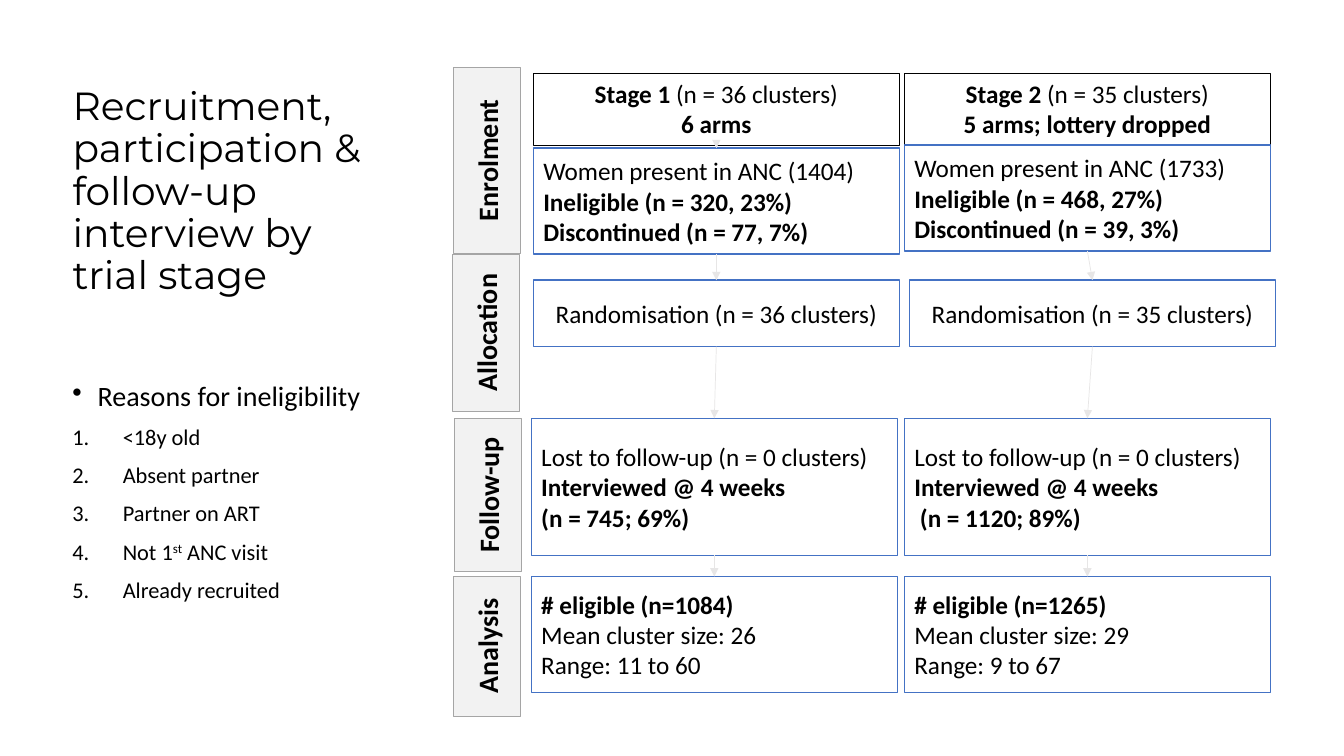
from lxml.etree import SubElement
from pptx import Presentation
from pptx.dml.color import RGBColor
from pptx.enum.shapes import MSO_CONNECTOR as Connector, MSO_SHAPE as Shape
from pptx.enum.text import MSO_ANCHOR as Anchor, PP_ALIGN as Align
from pptx.oxml.ns import qn
from pptx.util import Inches, Pt

# Content: a paragraph is a list of (text, style) runs; b = bold, s = superscript
TITLE = "Recruitment, participation & follow-up interview by trial stage"
REASONS_HEADING = "Reasons for ineligibility"
REASONS = [
    [("<18y old", "")],
    [("Absent partner", "")],
    [("Partner on ART", "")],
    [("Not 1", ""), ("st", "s"), (" ANC visit", "")],
    [("Already recruited", "")],
]
# Phase label, centre x, centre y, length
PHASES = [
    ("Enrolment", 4.83, 1.59, 1.85),
    ("Allocation", 4.82, 3.3, 1.56),
    ("Follow-up", 4.84, 4.91, 1.52),
    ("Analysis", 4.83, 6.41, 1.39),
]
# Box rows of a stage: top, height, alignment
ROWS = [
    (0.73, 0.71, Align.CENTER),
    (1.47, 1.05, Align.LEFT),
    (2.78, 0.66, Align.CENTER),
    (4.15, 1.36, Align.LEFT),
    (5.72, 1.15, Align.LEFT),
]
STAGES = [
    {
        "lefts": [5.29, 5.29, 5.29, 5.27, 5.27],
        "women_top": 1.47,
        "boxes": [
            [[("Stage 1 ", "b"), ("(n = 36 clusters)", "")], [("6 arms", "b")]],
            [[("Women present in ANC (1404)", "")],
             [("Ineligible (n = 320, 23%)", "b")],
             [("Discontinued (n = 77, 7%)", "b")]],
            [[("Randomisation (n = 36 clusters)", "")]],
            [[("Lost to follow-up (n = 0 clusters)", "")],
             [("Interviewed @ 4 weeks", "b")],
             [("(n = 745; 69%)", "b")]],
            [[("# eligible (n=1084)", "b")],
             [("Mean cluster size: 26", "")],
             [("Range: 11 to 60", "")]],
        ],
    },
    {
        "lefts": [8.97, 8.97, 9.02, 8.97, 8.97],
        "women_top": 1.44,
        "boxes": [
            [[("Stage 2 ", "b"), ("(n = 35 clusters)", "")],
             [("5 arms; lottery dropped", "b")]],
            [[("Women present in ANC (1733)", "")],
             [("Ineligible (n = 468, 27%)", "b")],
             [("Discontinued (n = 39, 3%)", "b")]],
            [[("Randomisation (n = 35 clusters)", "")]],
            [[("Lost to follow-up (n = 0 clusters)", "")],
             [("Interviewed @ 4 weeks", "b")],
             [(" (n = 1120; 89%)", "b")]],
            [[("# eligible (n=1265)", "b")],
             [("Mean cluster size: 29", "")],
             [("Range: 9 to 67", "")]],
        ],
    },
]
BOX_WIDTH, LABEL_WIDTH = 3.63, 0.66
COLORS = {
    "text": "000000", "box": "FFFFFF", "box_line": "4472C4",
    "label": "F2F2F2", "label_line": "A5A5A5", "arrow": "E7E6E6",
}


def color(name):
    return RGBColor.from_string(COLORS[name])


def write(paragraph, runs, size=18, font="Calibri", align=Align.LEFT, spacing=1.0, before=0):
    paragraph.alignment = align
    paragraph.line_spacing = spacing
    paragraph.space_before = Pt(before)
    for text, style in runs:
        run = paragraph.add_run()
        run.text = text
        run.font.name = font
        run.font.size = Pt(size)
        run.font.bold = style == "b"
        run.font.color.rgb = color("text")
        if style == "s":
            run.font._element.set("baseline", "30000")


def set_bullet(paragraph, tag, indent, **attributes):
    properties = paragraph._p.get_or_add_pPr()
    properties.set("marL", str(Inches(indent)))
    properties.set("indent", str(-Inches(indent)))
    SubElement(properties, qn(tag), **attributes)


def add_box(slide, left, top, width, height, paragraphs, fill, line, line_width,
            anchor=Anchor.MIDDLE, **text_format):
    shape = slide.shapes.add_shape(
        Shape.RECTANGLE, Inches(left), Inches(top), Inches(width), Inches(height))
    shape.shadow.inherit = False
    if fill:
        shape.fill.solid()
        shape.fill.fore_color.rgb = color(fill)
    else:
        shape.fill.background()
    shape.line.color.rgb = color(line)
    shape.line.width = Pt(line_width)
    frame = shape.text_frame
    frame.word_wrap = True
    frame.vertical_anchor = anchor
    for index, runs in enumerate(paragraphs):
        paragraph = frame.add_paragraph() if index else frame.paragraphs[0]
        write(paragraph, runs, **text_format)
    return shape


def add_arrow(slide, upper, lower):
    arrow = slide.shapes.add_connector(Connector.STRAIGHT, 0, 0, 0, 0)
    arrow.begin_connect(upper, 2)
    arrow.end_connect(lower, 0)
    arrow.line.color.rgb = color("arrow")
    arrow.line.width = Pt(0.5)
    SubElement(arrow.line._get_or_add_ln(), qn("a:tailEnd"), type="triangle")
    SubElement(arrow._element.spPr, qn("a:effectLst"))


def main():
    presentation = Presentation()
    presentation.slide_width = Inches(13.33)
    presentation.slide_height = Inches(7.5)
    slide = presentation.slides.add_slide(presentation.slide_layouts[5])

    # Title
    title = slide.shapes.title
    title.left, title.top = Inches(0.62), Inches(0.39)
    title.width, title.height = Inches(3.27), Inches(3.04)
    title.text_frame.word_wrap = True
    title.text_frame.vertical_anchor = Anchor.MIDDLE
    write(title.text_frame.paragraphs[0], [(TITLE, "")], size=28, font="Montserrat", spacing=0.9)

    # Phase labels, turned to read upwards
    for name, center_x, center_y, length in PHASES:
        label = add_box(slide, center_x - length / 2, center_y - LABEL_WIDTH / 2,
                        length, LABEL_WIDTH, [[(name, "b")]], "label", "label_line", 0.5,
                        size=20, align=Align.CENTER)
        label.rotation = 270

    # Stage columns, each box joined to the next
    for stage in STAGES:
        boxes = []
        for row, (top, height, align) in enumerate(ROWS):
            header = row == 0
            boxes.append(add_box(
                slide, stage["lefts"][row], stage["women_top"] if row == 1 else top,
                BOX_WIDTH, height, stage["boxes"][row],
                fill=None if header else "box",
                line="text" if header else "box_line",
                line_width=0.75 if header else 1,
                anchor=Anchor.TOP if header else Anchor.MIDDLE,
                align=align))
        for upper, lower in zip(boxes, boxes[1:]):
            add_arrow(slide, upper, lower)

    # Reasons list
    reasons = slide.shapes.add_textbox(Inches(0.62), Inches(3.74), Inches(4.36), Inches(3.42))
    frame = reasons.text_frame
    frame.word_wrap = True
    heading = frame.paragraphs[0]
    write(heading, [(REASONS_HEADING, "")], size=20, spacing=0.9)
    set_bullet(heading, "a:buChar", 0.25, char="•")
    for runs in REASONS:
        paragraph = frame.add_paragraph()
        write(paragraph, runs, size=16, spacing=0.9, before=10)
        set_bullet(paragraph, "a:buAutoNum", 0.5, type="arabicPeriod")

    presentation.save("out.pptx")


if __name__ == "__main__":
    main()
